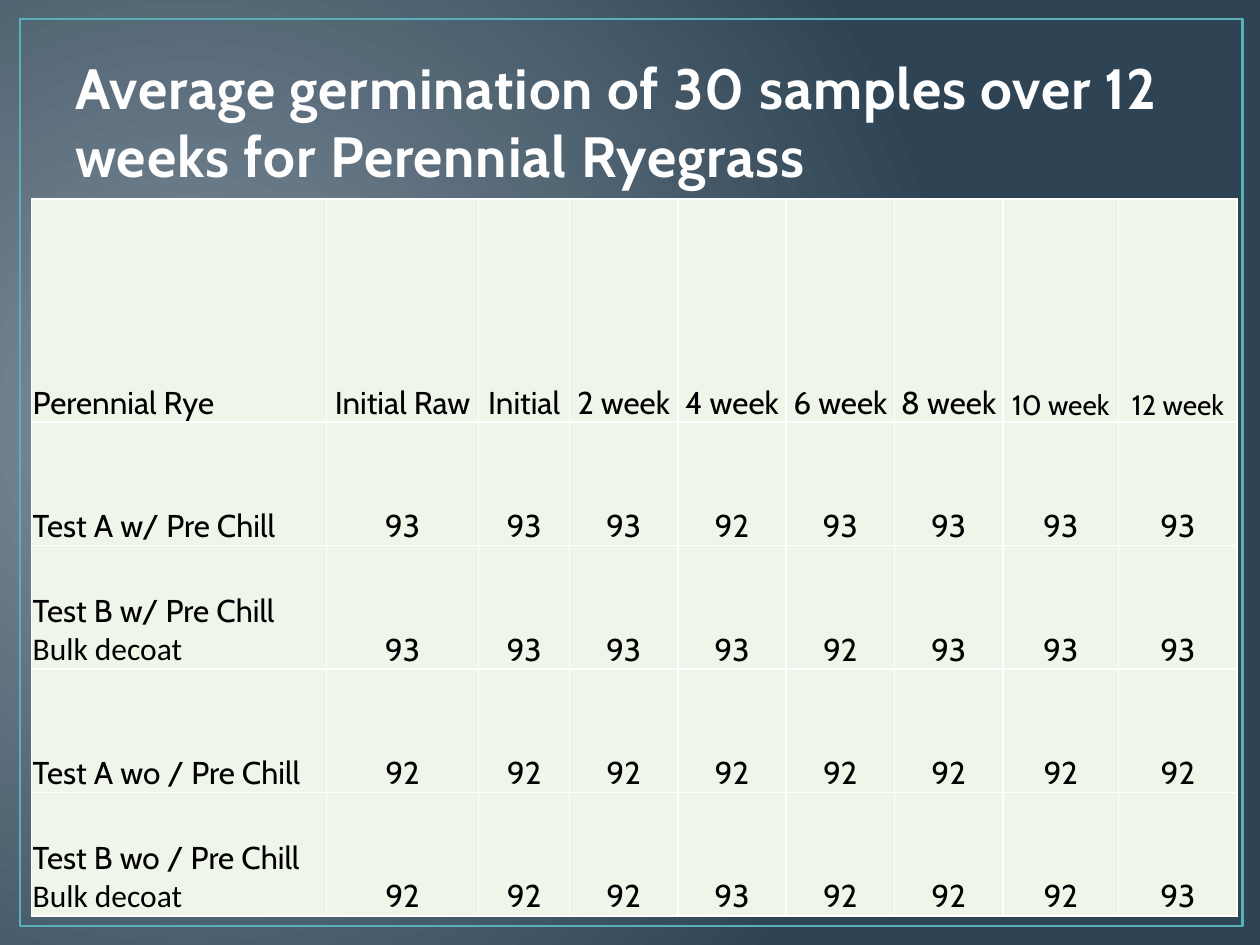
from lxml import etree
from pptx import Presentation
from pptx import util as u
from pptx.dml.color import RGBColor
from pptx.enum import shapes, text
from pptx.oxml import parse_xml
from pptx.oxml.ns import nsdecls, qn

COLORS = {
    "glow": "81919E", "slate": "2E4454", "frame": "59B0B9", "title": "FEFEFE",
    "outline": "4C6312", "cell": "EFF5E8", "text": "000000", "border": "FFFFFF",
}
COL_WIDTHS = [2.34, 1.21, 0.72] + [0.86] * 4 + [0.92, 0.94]
ROW_HEIGHTS = [1.77] + [0.98] * 4
HEADER = ["Perennial Rye", "Initial Raw", "Initial"] + [f"{w} week" for w in range(2, 13, 2)]
RESULTS = [
    ("Test A w/ Pre Chill", [93, 93, 93, 92, 93, 93, 93, 93]),
    ("Test B w/ Pre Chill\nBulk decoat", [93, 93, 93, 93, 92, 93, 93, 93]),
    ("Test A wo / Pre Chill", [92] * 8),
    ("Test B wo / Pre Chill\nBulk decoat", [92, 92, 92, 93, 92, 92, 92, 93]),
]
SMALL_HEADERS = ("10 week", "12 week")


def rgb(name):
    return RGBColor.from_string(COLORS[name])


def line_xml(tag, color, points):
    return parse_xml(
        f'<a:{tag} {nsdecls("a")} w="{int(u.Pt(points))}"><a:solidFill>'
        f'<a:srgbClr val="{COLORS[color]}"/></a:solidFill></a:{tag}>')


class SlideBuilder:
    font = "Cabin"

    def __init__(self, s):
        self.s = s

    def background(self):
        fill = self.s.background.fill
        fill.gradient()
        for stop, color in zip(fill.gradient_stops, ("glow", "slate")):
            stop.color.rgb = rgb(color)
        # Radial glow in place of the linear direction
        grad = self.s.background._cSld.find(".//" + qn("a:gradFill"))
        lin = grad.find(qn("a:lin"))
        radial = etree.Element(qn("a:path"), path="circle")
        etree.SubElement(radial, qn("a:fillToRect"), l="15000", t="50000", r="85000", b="60000")
        grad.replace(lin, radial)

    def frame(self, *box):
        sp = self.s.shapes.add_shape(shapes.MSO_SHAPE.RECTANGLE, *map(u.Inches, box))
        sp.shadow.inherit = False
        sp.fill.background()
        sp.line.color.rgb = rgb("frame")
        sp.line.width = u.Pt(1.5)

    def style(self, r, size, color, font=None):
        r.font.name = font or self.font
        r.font.size = u.Pt(size)
        r.font.color.rgb = rgb(color)

    def title(self, words, *box):
        tf = self.s.shapes.add_textbox(*map(u.Inches, box)).text_frame
        tf.word_wrap = True
        tf.vertical_anchor = text.MSO_ANCHOR.BOTTOM
        tf.text = words
        r = tf.paragraphs[0].runs[0]
        self.style(r, 32.4, "title")
        r.font.bold = True
        rPr = r.font._element
        rPr.set("spc", "50")
        rPr.insert(0, line_xml("ln", "outline", 1.05))

    def cell(self, cell, words, centred):
        cell.fill.solid()
        cell.fill.fore_color.rgb = rgb("cell")
        cell.vertical_anchor = text.MSO_ANCHOR.BOTTOM
        cell.margin_left = cell.margin_right = cell.margin_top = u.Inches(0.01)
        cell.margin_bottom = 0
        cell.text_frame.text = words
        for i, p in enumerate(cell.text_frame.paragraphs):
            if centred:
                p.alignment = text.PP_ALIGN.CENTER
            self.style(p.runs[0], 16 if words in SMALL_HEADERS else 18, "text",
                       "Calibri" if i else None)
        # Borders come before the fill in the cell properties
        for i, tag in enumerate(("lnL", "lnR", "lnT", "lnB")):
            cell._tc.tcPr.insert(i, line_xml(tag, "border", 1))

    def table(self, rows, left, top):
        table = self.s.shapes.add_table(
            len(rows), len(COL_WIDTHS), u.Inches(left), u.Inches(top),
            u.Inches(sum(COL_WIDTHS)), u.Inches(sum(ROW_HEIGHTS))).table
        for column, width in zip(table.columns, COL_WIDTHS):
            column.width = u.Inches(width)
        for row, height, values in zip(table.rows, ROW_HEIGHTS, rows):
            row.height = u.Inches(height)
            for i, (cell, value) in enumerate(zip(row.cells, values)):
                self.cell(cell, str(value), centred=i > 0)


def main():
    prs = Presentation()
    prs.slide_width, prs.slide_height = u.Inches(10), u.Inches(7.5)
    slide = SlideBuilder(prs.slides.add_slide(prs.slide_layouts[6]))

    # Backdrop
    slide.background()
    slide.frame(0.16, 0.15, 9.7, 7.2)

    # Title and germination table
    slide.title("Average germination of 30 samples over 12 weeks for Perennial Ryegrass",
                0.5, 0.3, 9, 1.25)
    slide.table([HEADER] + [[name, *values] for name, values in RESULTS], 0.25, 1.58)

    prs.save("out.pptx")


if __name__ == "__main__":
    main()
